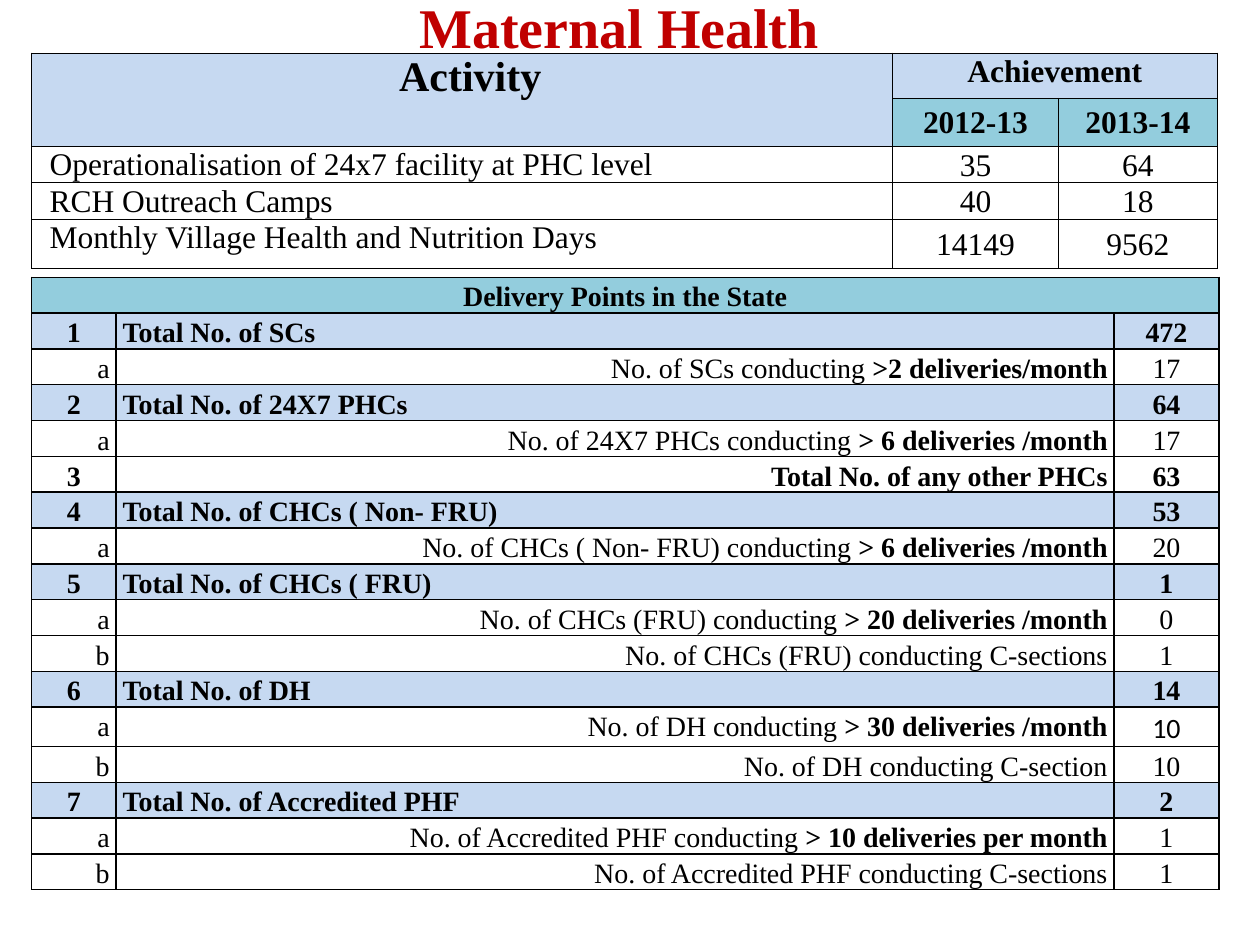
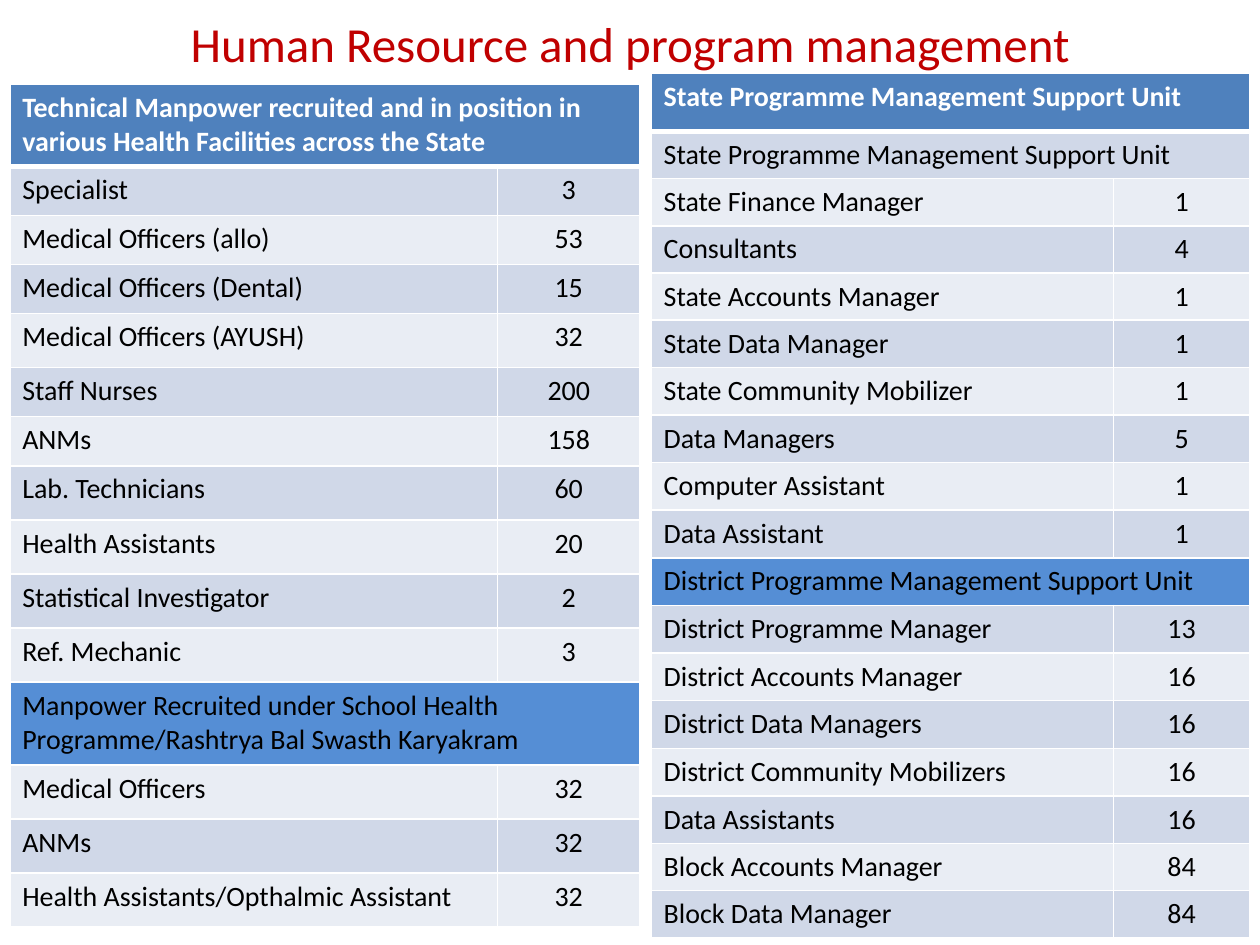
from dataclasses import dataclass
from typing import NamedTuple

from lxml import etree
from pptx import Presentation
from pptx import util as u
from pptx.dml.color import RGBColor
from pptx.enum import text
from pptx.oxml.ns import qn

# Shared look
RED = RGBColor(0xC0, 0x00, 0x00)
BLACK = RGBColor(0x00, 0x00, 0x00)
WHITE = RGBColor(0xFF, 0xFF, 0xFF)
PALE_BLUE = RGBColor(0xC6, 0xD9, 0xF1)
TEAL = RGBColor(0x93, 0xCD, 0xDD)
HEADER_BLUE = RGBColor(0x4F, 0x81, 0xBD)
SECTION_BLUE = RGBColor(0x55, 0x8E, 0xD5)
BANDS = (RGBColor(0xE9, 0xED, 0xF4), RGBColor(0xD0, 0xD8, 0xE8))
SERIF, SANS = "Times New Roman", "Calibri"
LEFT, CENTER, RIGHT = text.PP_ALIGN.LEFT, text.PP_ALIGN.CENTER, text.PP_ALIGN.RIGHT
TOP, MIDDLE = text.MSO_ANCHOR.TOP, text.MSO_ANCHOR.MIDDLE


class Margins(NamedTuple):
    left: float
    top: float
    right: float
    bottom: float


TIGHT = Margins(0.03, 0.03, 0.03, 0)
INDENTED = Margins(0.36, 0.03, 0.03, 0)
SIDES_ONLY = Margins(0.13, 0, 0.13, 0)
ROOMY = Margins(0.25, 0.13, 0.25, 0.13)


@dataclass
class Grid:
    """Place and measures of a table, in centimetres."""
    left: float
    top: float
    columns: list[float]
    rows: list[float]
    line: RGBColor
    line_width: float


class Delivery(NamedTuple):
    mark: str
    label: str
    strong: str
    count: str
    count_font: str = SERIF


@dataclass
class Staff:
    """A headed staff list; an entry without a count is a full-width row."""
    grid: Grid
    entries: list[tuple[str, str]]
    section: str


ACTIVITIES = [
    ("Operationalisation of 24x7 facility at PHC level", "35", "64"),
    ("RCH Outreach Camps", "40", "18"),
    ("Monthly Village Health and Nutrition Days", "14149", "9562"),
]
ACTIVITY_GRID = Grid(0.64, 1.07, [17.35, 3.35, 3.2],
                     [0.91, 0.97, 0.73, 0.73, 0.99], BLACK, 0.5)

DELIVERIES = [
    Delivery("1", "", "Total No. of SCs", "472"),
    Delivery("a", "No. of SCs conducting ", ">2 deliveries/month", "17"),
    Delivery("2", "", "Total No. of 24X7 PHCs", "64"),
    Delivery("a", "No. of 24X7 PHCs conducting ", "> 6 deliveries /month", "17"),
    Delivery("3", "", "Total No. of any other PHCs", "63"),
    Delivery("4", "", "Total No. of CHCs ( Non- FRU)", "53"),
    Delivery("a", "No. of CHCs ( Non- FRU) conducting ", "> 6 deliveries /month", "20"),
    Delivery("5", "", "Total No. of CHCs ( FRU)", "1"),
    Delivery("a", "No. of CHCs (FRU) conducting ", "> 20 deliveries /month", "0"),
    Delivery("b", "No. of CHCs (FRU) conducting C-sections", "", "1"),
    Delivery("6", "", "Total No. of DH", "14"),
    Delivery("a", "No. of DH conducting ", "> 30 deliveries /month", "10", SANS),
    Delivery("b", "No. of DH conducting C-section", "", "10"),
    Delivery("7", "", "Total No. of Accredited PHF", "2"),
    Delivery("a", "No. of Accredited PHF conducting ", "> 10 deliveries per month", "1"),
    Delivery("b", "No. of Accredited PHF conducting C-sections", "", "1"),
]
DELIVERY_GRID = Grid(0.64, 5.59, [1.7, 20.12, 2.11],
                     [0.72] * (len(DELIVERIES) + 1), BLACK, 1)
PLAIN_TOTAL = "3"

FACILITY_STAFF = Staff(
    Grid(0.2, 1.7, [9.83, 2.87],
         [1.65] + [0.99] * 3 + [1.09] + [0.99] * 2 + [1.09] * 4 + [1.67] + [1.09] * 3,
         WHITE, 1),
    [
        ("Technical Manpower recruited and in position in various Health Facilities "
         "across the State", ""),
        ("Specialist", "3"),
        ("Medical Officers (allo)", "53"),
        ("Medical Officers (Dental)", "15"),
        ("Medical Officers (AYUSH)", "32"),
        ("Staff Nurses", "200"),
        ("ANMs", "158"),
        ("Lab. Technicians", "60"),
        ("Health Assistants", "20"),
        ("Statistical Investigator", "2"),
        ("Ref. Mechanic", "3"),
        ("Manpower Recruited under School Health Programme/Rashtrya Bal Swasth "
         "Karyakram", ""),
        ("Medical Officers", "32"),
        ("ANMs", "32"),
        ("Health Assistants/Opthalmic Assistant", "32"),
    ],
    "Manpower Recruited")

SUPPORT_STAFF = Staff(
    Grid(13.13, 1.47, [9.32, 2.74],
         [1.18] + [0.94] * 5 + [0.96] * 10 + [0.94] * 2, WHITE, 1),
    [
        ("State Programme Management Support Unit", ""),
        ("State Programme Management Support Unit", ""),
        ("State Finance Manager", "1"),
        ("Consultants", "4"),
        ("State Accounts Manager", "1"),
        ("State Data Manager", "1"),
        ("State Community Mobilizer", "1"),
        ("Data Managers", "5"),
        ("Computer Assistant", "1"),
        ("Data Assistant", "1"),
        ("District Programme Management Support Unit", ""),
        ("District Programme Manager", "13"),
        ("District Accounts Manager", "16"),
        ("District Data Managers", "16"),
        ("District Community Mobilizers", "16"),
        ("Data Assistants", "16"),
        ("Block Accounts Manager", "84"),
        ("Block Data Manager", "84"),
    ],
    "District Programme Management")


def write(frame, words: str, *, strong: str = "", size: float = 16, font: str = SERIF,
          color: RGBColor = BLACK, bold: bool = False, align=LEFT,
          spacing: float | None = None) -> None:
    """Fill a frame with words, then with strong words in bold."""
    para = frame.paragraphs[0]
    para.alignment = align
    if spacing:
        para.line_spacing = spacing
    for part, heavy in ((words, bold), (strong, True)):
        if part:
            span = para.add_run()
            span.text = part
            span.font.size = u.Pt(size)
            span.font.name = font
            span.font.bold = heavy
            span.font.color.rgb = color


def add_title(page, words: str, left: float, top: float, width: float, height: float,
              **style) -> None:
    box = page.shapes.add_textbox(u.Cm(left), u.Cm(top), u.Cm(width), u.Cm(height))
    frame = box.text_frame
    frame.word_wrap = True
    frame.auto_size = text.MSO_AUTO_SIZE.NONE
    frame.vertical_anchor = MIDDLE
    write(frame, words, color=RED, align=CENTER, **style)


def set_border(cell, side: str, color: RGBColor, width: float) -> None:
    """Draw one side (L, R, T or B) of a cell, replacing any earlier line."""
    properties = cell._tc.get_or_add_tcPr()
    tag = qn(f"a:ln{side}")
    for old in properties.findall(tag):
        properties.remove(old)
    line = etree.Element(tag, w=str(u.Pt(width)))
    fill = etree.SubElement(line, qn("a:solidFill"))
    etree.SubElement(fill, qn("a:srgbClr"), val=str(color))
    properties.insert("LRTB".index(side), line)


def add_grid(page, grid: Grid):
    """Add an empty, unfilled table with ruled cells."""
    frame = page.shapes.add_table(
        len(grid.rows), len(grid.columns), u.Cm(grid.left), u.Cm(grid.top),
        u.Cm(sum(grid.columns)), u.Cm(sum(grid.rows)))
    table = frame.table
    table.first_row = table.horz_banding = False
    for column, width in zip(table.columns, grid.columns):
        column.width = u.Cm(width)
    for row, height in zip(table.rows, grid.rows):
        row.height = u.Cm(height)
    for cell in table.iter_cells():
        cell.fill.background()
        for side in "LRTB":
            set_border(cell, side, grid.line, grid.line_width)
    return table


def fill_cell(cell, words: str, *, fill: RGBColor | None = None,
              margins: Margins = ROOMY, anchor=TOP, **style) -> None:
    if fill is not None:
        cell.fill.solid()
        cell.fill.fore_color.rgb = fill
    cell.margin_left, cell.margin_top, cell.margin_right, cell.margin_bottom = map(
        u.Cm, margins)
    cell.vertical_anchor = anchor
    write(cell.text_frame, words, **style)


def add_activities(page) -> None:
    table = add_grid(page, ACTIVITY_GRID)
    table.cell(0, 0).merge(table.cell(1, 0))
    table.cell(0, 1).merge(table.cell(0, 2))
    heading = dict(bold=True, align=CENTER)
    fill_cell(table.cell(0, 0), "Activity", fill=PALE_BLUE, margins=INDENTED,
              size=24, **heading)
    fill_cell(table.cell(0, 1), "Achievement", fill=PALE_BLUE, margins=TIGHT,
              size=18, **heading)
    for column, year in enumerate(("2012-13", "2013-14"), 1):
        fill_cell(table.cell(1, column), year, fill=TEAL, margins=TIGHT,
                  anchor=MIDDLE, size=18, **heading)
    for row, (activity, *counts) in enumerate(ACTIVITIES, 2):
        fill_cell(table.cell(row, 0), activity, margins=INDENTED, size=18)
        for column, count in enumerate(counts, 1):
            fill_cell(table.cell(row, column), count, margins=TIGHT,
                      anchor=MIDDLE, size=18, align=CENTER)


def add_deliveries(page) -> None:
    table = add_grid(page, DELIVERY_GRID)
    table.cell(0, 0).merge(table.cell(0, 2))
    common = dict(margins=SIDES_ONLY, spacing=1.15)
    fill_cell(table.cell(0, 0), "Delivery Points in the State", fill=TEAL,
              bold=True, align=CENTER, **common)
    for row, item in enumerate(DELIVERIES, 1):
        total = item.mark.isdigit()
        shaded = total and item.mark != PLAIN_TOTAL
        look = dict(common, fill=PALE_BLUE if shaded else None, bold=total)
        fill_cell(table.cell(row, 0), item.mark, align=CENTER if total else RIGHT, **look)
        fill_cell(table.cell(row, 1), item.label, strong=item.strong,
                  align=LEFT if shaded else RIGHT, **look)
        fill_cell(table.cell(row, 2), item.count, font=item.count_font,
                  align=CENTER, **look)


def add_staff(page, staff: Staff) -> None:
    table = add_grid(page, staff.grid)
    for row, (post, count) in enumerate(staff.entries):
        first, last = table.cell(row, 0), table.cell(row, 1)
        header = row == 0
        fill = BANDS[row % 2]
        if header:
            fill = HEADER_BLUE
        elif post.startswith(staff.section):
            fill = SECTION_BLUE
        fill_cell(first, post, fill=fill, font=SANS, bold=header,
                  color=WHITE if header else BLACK)
        if count:
            fill_cell(last, count, fill=fill, font=SANS, align=CENTER)
        else:
            first.merge(last)
    # Thick rule under the header
    for column in range(2):
        set_border(table.cell(0, column), "B", WHITE, 3)
        set_border(table.cell(1, column), "T", WHITE, 3)


def main() -> None:
    deck = Presentation()
    deck.slide_width, deck.slide_height = u.Cm(25.4), u.Cm(19.05)
    blank = deck.slide_layouts[6]

    # Maternal health
    page = deck.slides.add_slide(blank)
    add_activities(page)
    add_title(page, "Maternal Health", 0.84, 0.2, 23.29, 0.64, size=32, bold=True)
    add_deliveries(page)

    # Human resources
    page = deck.slides.add_slide(blank)
    add_title(page, "Human Resource and program management", 1.27, 0.2, 22.86, 1.35,
              size=28, font=SANS)
    for staff in (FACILITY_STAFF, SUPPORT_STAFF):
        add_staff(page, staff)

    deck.save("out.pptx")


if __name__ == "__main__":
    main()
